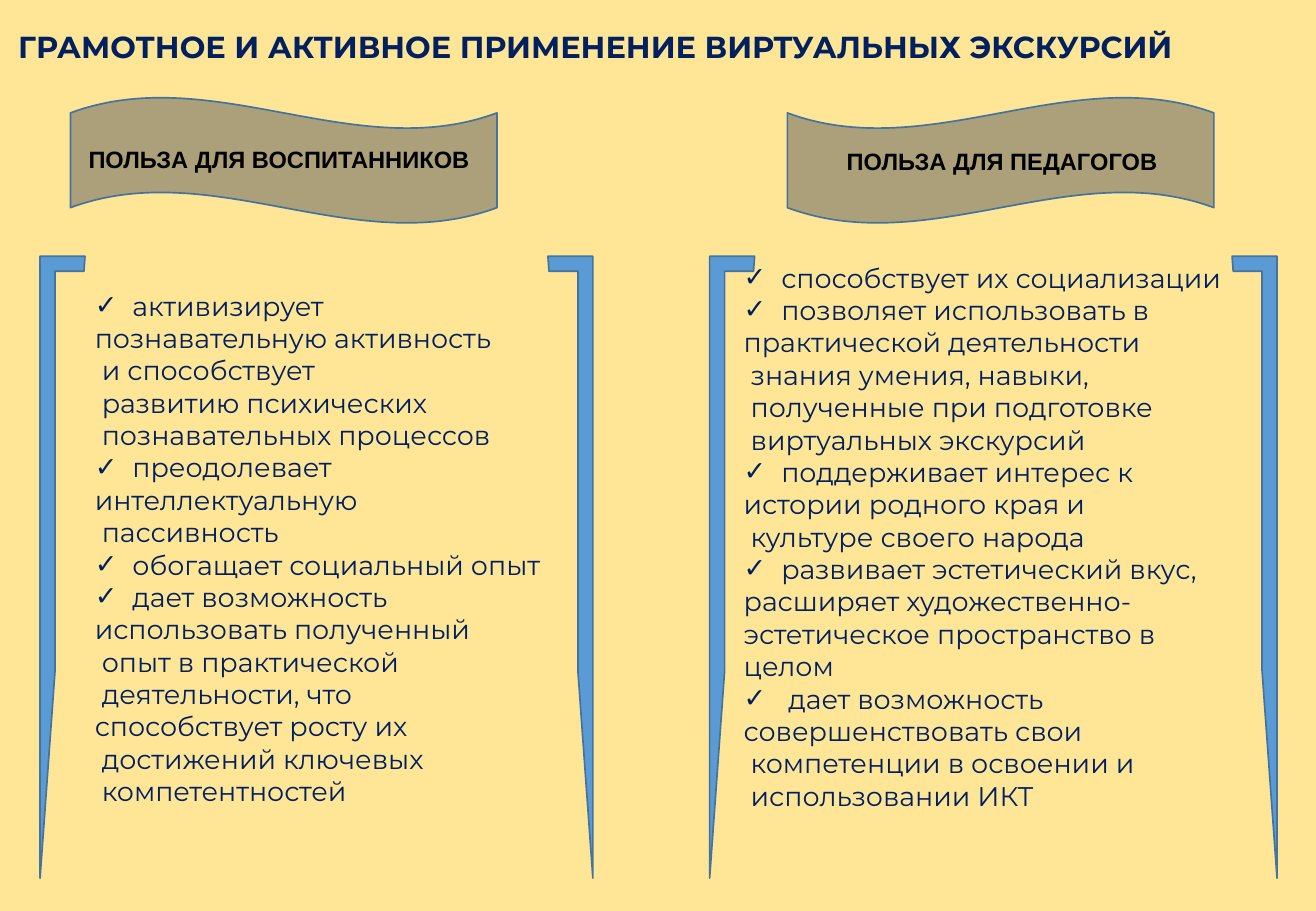
from lxml import etree
from pptx import Presentation
from pptx.dml.color import RGBColor
from pptx.enum import shapes, text
from pptx.oxml import ns
from pptx.util import Inches, Pt

NAVY, BLACK, OUTLINE = "002060", "000000", "43739E"
BACKGROUND, SLATE, BLUE = "FFE596", "333F50", "5B9BD5"
BULLET = "✓"

TITLE = "ГРАМОТНОЕ И АКТИВНОЕ ПРИМЕНЕНИЕ ВИРТУАЛЬНЫХ ЭКСКУРСИЙ"
PUPIL_BENEFITS = [
    "✓активизирует",
    "познавательную активность",
    " и способствует\n развитию психических\n познавательных процессов",
    "✓преодолевает",
    "интеллектуальную\n пассивность",
    "✓обогащает социальный опыт",
    "✓дает возможность",
    "использовать полученный\n опыт в практической\n деятельности, что",
    "способствует росту их\n достижений ключевых\n компетентностей",
]
TEACHER_BENEFITS = [
    "✓способствует их социализации",
    "✓позволяет использовать в",
    "практической деятельности\n знания умения, навыки,"
    "\n полученные при подготовке\n виртуальных экскурсий",
    "✓поддерживает интерес к",
    "истории родного края и\n культуре своего народа",
    "✓развивает эстетический вкус,",
    "расширяет художественно-",
    "эстетическое пространство в",
    "целом",
    "✓ дает возможность",
    "совершенствовать свои\n компетенции в освоении и\n использовании ИКТ",
]


def paint(color_format, color, opacity=None):
    color_format.solid()
    color_format.fore_color.rgb = RGBColor.from_string(color)
    if opacity is not None:
        for value in color_format._xPr.iter(ns.qn("a:srgbClr")):
            etree.SubElement(value, ns.qn("a:alpha"), val=str(opacity * 1000))


def set_font(paragraph, name, size, color, bold=False):
    font = paragraph.font
    font.name, font.size, font.bold = name, Pt(size), bold
    font.color.rgb = RGBColor.from_string(color)


def place(shape, box):
    shape.left, shape.top, shape.width, shape.height = map(Inches, box)


def prepare_frame(shape):
    frame = shape.text_frame
    frame.word_wrap = True
    frame.auto_size = text.MSO_AUTO_SIZE.NONE
    frame.vertical_anchor = text.MSO_ANCHOR.TOP
    return frame


def add_shape(slide, kind, box, color, opacity=None, flipped=False):
    shape = slide.shapes.add_shape(kind, *map(Inches, box))
    shape.shadow.inherit = False
    paint(shape.fill, color, opacity)
    paint(shape.line.fill, OUTLINE)
    shape.line.width = Pt(1)
    if flipped:
        shape.element.spPr.get_or_add_xfrm().set("flipH", "1")


def fill_title(title, box):
    place(title, box)
    frame = prepare_frame(title)
    frame.text = TITLE
    paragraph = frame.paragraphs[0]
    paragraph.alignment = text.PP_ALIGN.LEFT
    set_font(paragraph, "Montserrat", 18, NAVY, bold=True)


def add_banner(slide, box, heading, heading_offset, heading_width, flipped):
    add_shape(slide, shapes.MSO_SHAPE.WAVE, box, SLATE, 41, flipped)
    left, top = box[0] + heading_offset[0], box[1] + heading_offset[1]
    label = slide.shapes.add_textbox(
        *map(Inches, (left, top, heading_width, 0.33)))
    frame = prepare_frame(label)
    frame.text = heading
    set_font(frame.paragraphs[0], "Arial", 14, BLACK, bold=True)


def add_brackets(slide, box):
    left, top, width, height = box
    thickness = 0.37
    for x, flipped in ((left, False), (left + width - thickness, True)):
        add_shape(slide, shapes.MSO_SHAPE.HALF_FRAME,
                  (x, top, thickness, height), BLUE, flipped=flipped)


def format_bullet(paragraph, bulleted):
    properties = paragraph._p.get_or_add_pPr()
    indent = Inches(0.31) if bulleted else 0
    properties.set("marL", str(indent))
    properties.set("indent", str(-indent))
    if bulleted:
        etree.SubElement(properties, ns.qn("a:buFont"), typeface="Arial")
        etree.SubElement(properties, ns.qn("a:buChar"), char=BULLET)
    else:
        etree.SubElement(properties, ns.qn("a:buNone"))


def fill_list(slide, body, box, items):
    """Fill the body placeholder and bring it in front of the brackets."""
    place(body, box)
    frame = prepare_frame(body)
    for index, item in enumerate(items):
        paragraph = frame.add_paragraph() if index else frame.paragraphs[0]
        paragraph.text = item.removeprefix(BULLET)
        format_bullet(paragraph, item.startswith(BULLET))
        paragraph.space_before = Pt(0)
        set_font(paragraph, "Montserrat", 16, NAVY)
    slide.shapes.element.append(body.element)


def main():
    presentation = Presentation()
    presentation.slide_width = Inches(10.83)
    presentation.slide_height = Inches(7.5)
    slide = presentation.slides.add_slide(presentation.slide_layouts[3])
    paint(slide.background.fill, BACKGROUND)
    fill_title(slide.shapes.title, (0.05, 0.18, 10.24, 0.46))

    add_banner(slide, (0.58, 0.8, 3.51, 1.04), "ПОЛЬЗА ДЛЯ ВОСПИТАННИКОВ",
               (0.05, 0.34), 3.41, flipped=False)
    add_brackets(slide, (0.33, 2.11, 4.55, 5.12))
    fill_list(slide, slide.placeholders[1], (0.68, 2.33, 4.21, 5.16),
              PUPIL_BENEFITS)

    add_banner(slide, (6.48, 0.8, 3.51, 1.04), "ПОЛЬЗА ДЛЯ ПЕДАГОГОВ",
               (0.39, 0.36), 2.8, flipped=True)
    add_brackets(slide, (5.84, 2.11, 4.67, 5.12))
    fill_list(slide, slide.placeholders[2], (6.02, 2.1, 4.53, 5.4),
              TEACHER_BENEFITS)

    presentation.save("out.pptx")


if __name__ == "__main__":
    main()
